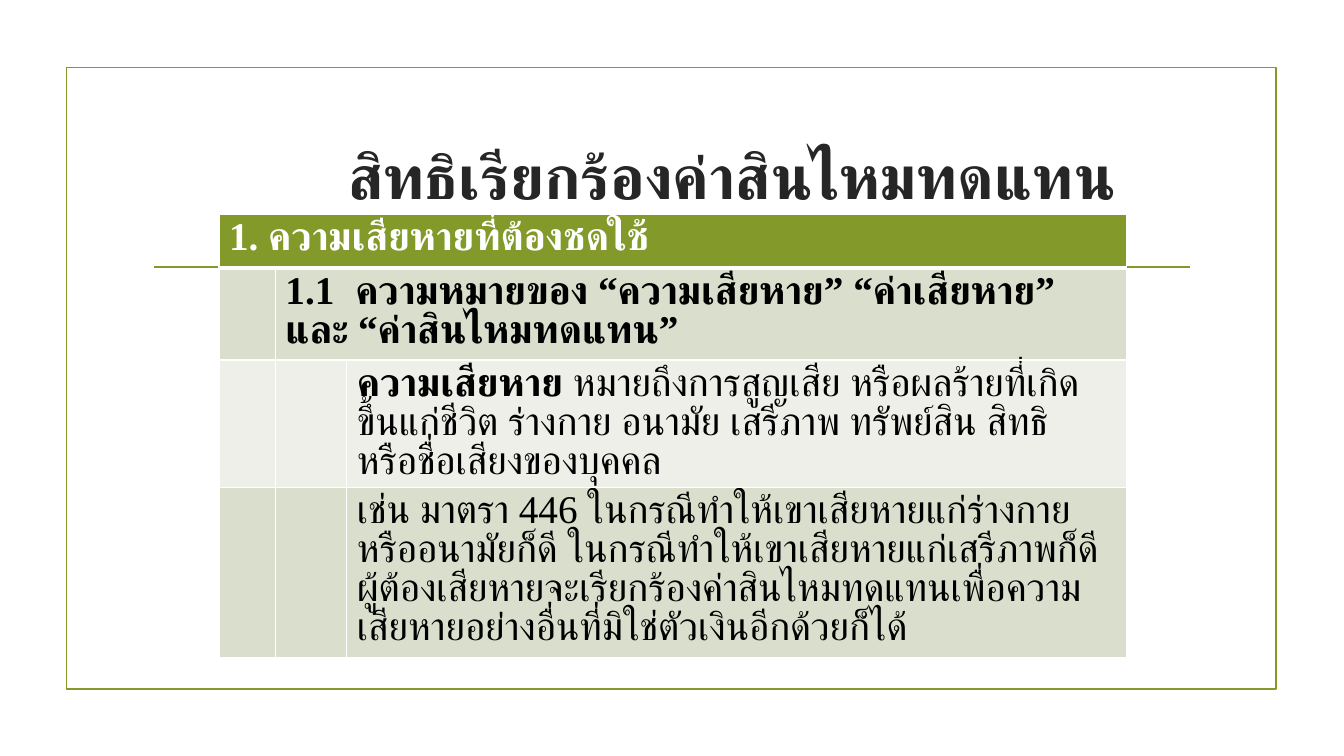
from lxml import etree
from pptx import Presentation
from pptx.dml.color import RGBColor
from pptx.enum import lang, shapes, text
from pptx.oxml import ns
from pptx.util import Cm, Pt

GREEN = RGBColor(0x83, 0x99, 0x2A)
SAGE = RGBColor(0xD9, 0xDE, 0xCD)
PALE = RGBColor(0xED, 0xEF, 0xE8)
WHITE = RGBColor(0xFF, 0xFF, 0xFF)
BLACK = RGBColor(0, 0, 0)
CHARCOAL = RGBColor(0x26, 0x26, 0x26)
FONT = "Times New Roman"

COLUMN_WIDTHS = (1.42, 1.8, 19.64)
ROW_HEIGHTS = (1.35, 2.32, 3.21, 4.29)
ROW_FILLS = (GREEN, SAGE, PALE, SAGE)
HEADING = "1. ความเสียหายที่ต้องชดใช้"
TOPIC = "1.1\tความหมายของ “ความเสียหาย” “ค่าเสียหาย” และ “ค่าสินไหมทดแทน”"
TERM = "ความเสียหาย "
MEANING = (
    "หมายถึงการสูญเสีย หรือผลร้ายที่เกิดขึ้นแก่ชีวิต ร่างกาย อนามัย เสรีภาพ "
    "ทรัพย์สิน สิทธิ หรือชื่อเสียงของบุคคล"
)
EXAMPLE = (
    "เช่น มาตรา 446 ในกรณีทำให้เขาเสียหายแก่ร่างกายหรืออนามัยก็ดี "
    "ในกรณีทำให้เขาเสียหายแก่เสรีภาพก็ดี "
    "ผู้ต้องเสียหายจะเรียกร้องค่าสินไหมทดแทนเพื่อความเสียหายอย่างอื่นที่มิใช่ตัวเงินอีกด้วยก็ได้"
)


def add_text(paragraph, words, size=28, color=BLACK, bold=False):
    """Append a formatted Thai run to a paragraph."""
    run = paragraph.add_run()
    run.text = words
    run.font.size = Pt(size)
    run.font.bold = bold
    run.font.name = FONT
    run.font.color.rgb = color
    run.font.language_id = lang.MSO_LANGUAGE_ID.THAI
    complex_font = etree.SubElement(run.font._element, ns.qn("a:cs"))
    complex_font.set("typeface", FONT)


def add_frame(slide):
    """Draw the green outline around the slide content."""
    frame = slide.shapes.add_shape(
        shapes.MSO_SHAPE.RECTANGLE, Cm(1.68), Cm(1.7), Cm(30.48), Cm(15.67)
    )
    frame.shadow.inherit = False
    frame.fill.background()
    frame.line.color.rgb = GREEN
    frame.line.width = Pt(1.25)


def add_rule(slide):
    """Draw the green horizontal line below the title."""
    rule = slide.shapes.add_connector(
        shapes.MSO_CONNECTOR.STRAIGHT, Cm(3.89), Cm(6.73), Cm(30), Cm(6.73)
    )
    rule.line.color.rgb = GREEN
    rule.line.width = Pt(1.25)
    etree.SubElement(rule._element.spPr, ns.qn("a:effectLst"))


def format_title(slide):
    """Place and fill the title placeholder."""
    title = slide.shapes.title
    title.left, title.top, title.width, title.height = Cm(3.61), Cm(2.72), Cm(26.67), Cm(3.63)
    frame = title.text_frame
    frame.margin_left = Cm(3.25)
    frame.word_wrap = True
    frame.vertical_anchor = text.MSO_ANCHOR.MIDDLE
    paragraph = frame.paragraphs[0]
    paragraph.alignment = text.PP_ALIGN.CENTER
    paragraph.line_spacing = 0.9
    add_text(paragraph, "สิทธิเรียกร้องค่าสินไหมทดแทน", size=44, color=CHARCOAL, bold=True)


def format_cell(cell, fill, bottom_width):
    """Give a cell white borders and a solid fill."""
    properties = cell._tc.get_or_add_tcPr()
    for side, width in (("L", 1), ("R", 1), ("T", 1), ("B", bottom_width)):
        border = etree.SubElement(properties, ns.qn(f"a:ln{side}"), w=str(Pt(width)))
        solid = etree.SubElement(border, ns.qn("a:solidFill"))
        etree.SubElement(solid, ns.qn("a:srgbClr"), val=str(WHITE))
    cell.fill.solid()
    cell.fill.fore_color.rgb = fill


def add_tab_stop(paragraph, position):
    """Add a left tab stop to a paragraph."""
    stops = etree.SubElement(paragraph._p.get_or_add_pPr(), ns.qn("a:tabLst"))
    etree.SubElement(stops, ns.qn("a:tab"), pos=str(position), algn="l")


def add_damages_table(slide):
    """Add the outline of compensable damages."""
    table = slide.shapes.add_table(
        len(ROW_HEIGHTS), len(COLUMN_WIDTHS), Cm(5.52), Cm(5.4),
        Cm(sum(COLUMN_WIDTHS)), Cm(sum(ROW_HEIGHTS)),
    ).table
    for column, width in zip(table.columns, COLUMN_WIDTHS):
        column.width = Cm(width)
    for index, (row, height, fill) in enumerate(zip(table.rows, ROW_HEIGHTS, ROW_FILLS)):
        row.height = Cm(height)
        for cell in row.cells:
            format_cell(cell, fill, 3 if index == 0 else 1)
    table.cell(0, 0).merge(table.cell(0, 2))
    table.cell(1, 1).merge(table.cell(1, 2))

    positions = ((0, 0), (1, 1), (2, 2), (3, 2))
    heading, topic, meaning, example = (
        table.cell(*position).text_frame.paragraphs[0] for position in positions
    )
    for paragraph in (heading, topic, meaning, example):
        paragraph.line_spacing = 0.9
    add_tab_stop(topic, Cm(1.76))
    add_text(heading, HEADING, color=WHITE, bold=True)
    add_text(topic, TOPIC, bold=True)
    add_text(meaning, TERM, bold=True)
    add_text(meaning, MEANING)
    add_text(example, EXAMPLE)


def main():
    """Build and save the slide."""
    presentation = Presentation()
    presentation.slide_width, presentation.slide_height = Cm(33.87), Cm(19.05)
    slide = presentation.slides.add_slide(presentation.slide_layouts[5])
    add_frame(slide)
    add_rule(slide)
    format_title(slide)
    add_damages_table(slide)
    presentation.save("out.pptx")


if __name__ == "__main__":
    main()
